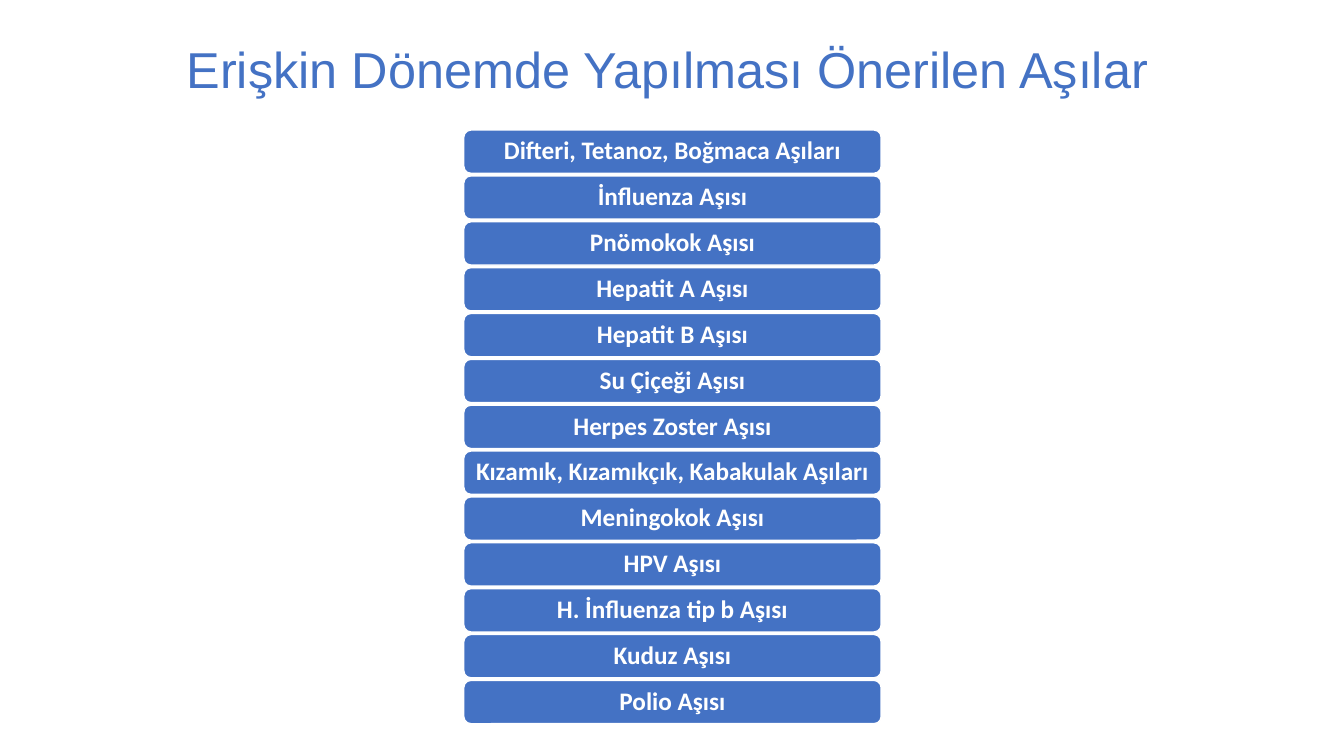
from pptx import Presentation
from pptx.dml.color import RGBColor
from pptx.enum import shapes, text
from pptx.util import Inches, Pt

TITLE = "Erişkin Dönemde Yapılması Önerilen Aşılar"
VACCINES = [
    "Difteri, Tetanoz, Boğmaca Aşıları",
    "İnfluenza Aşısı",
    "Pnömokok Aşısı",
    "Hepatit A Aşısı",
    "Hepatit B Aşısı",
    "Su Çiçeği Aşısı",
    "Herpes Zoster Aşısı",
    "Kızamık, Kızamıkçık, Kabakulak Aşıları",
    "Meningokok Aşısı",
    "HPV Aşısı",
    "H. İnfluenza tip b Aşısı",
    "Kuduz Aşısı",
    "Polio Aşısı",
]
COLORS = {"blue": "4472C4", "white": "FFFFFF"}

BAR_LEFT, BAR_WIDTH, BAR_HEIGHT = 4.6, 4.14, 0.43
FIRST_TOP, LAST_TOP = 1.29, 6.75


def color(name):
    return RGBColor.from_string(COLORS[name])


def write(frame, content, font_name, size, color_name, alignment, bold=False):
    frame.word_wrap = True
    frame.vertical_anchor = text.MSO_ANCHOR.MIDDLE
    paragraph = frame.paragraphs[0]
    paragraph.alignment = alignment
    paragraph.line_spacing = 0.9
    run = paragraph.add_run()
    run.text = content
    run.font.name = font_name
    run.font.size = Pt(size)
    run.font.bold = bold
    run.font.color.rgb = color(color_name)


def add_bar(slide, label, top):
    bar = slide.shapes.add_shape(
        shapes.MSO_SHAPE.ROUNDED_RECTANGLE,
        Inches(BAR_LEFT), Inches(top), Inches(BAR_WIDTH), Inches(BAR_HEIGHT))
    bar.shadow.inherit = False
    bar.fill.solid()
    bar.fill.fore_color.rgb = color("blue")
    bar.line.color.rgb = color("white")
    bar.line.width = Pt(1)
    frame = bar.text_frame
    frame.margin_left = frame.margin_right = Inches(0.09)
    frame.margin_top = frame.margin_bottom = Inches(0.06)
    write(frame, label, "Calibri", 18, "white", text.PP_ALIGN.CENTER, bold=True)


def main():
    presentation = Presentation()
    presentation.slide_width = Inches(13.33)
    presentation.slide_height = Inches(7.5)
    slide = presentation.slides.add_slide(presentation.slide_layouts[5])

    title = slide.shapes.title
    title.left, title.top = Inches(0.92), Inches(0)
    title.width, title.height = Inches(11.5), Inches(1.44)
    title.text_frame.margin_left = Inches(0.93)
    write(title.text_frame, TITLE, "Arial", 36, "blue", text.PP_ALIGN.LEFT)

    pitch = (LAST_TOP - FIRST_TOP) / (len(VACCINES) - 1)
    for index, vaccine in enumerate(VACCINES):
        add_bar(slide, vaccine, FIRST_TOP + index * pitch)

    presentation.save("out.pptx")


if __name__ == "__main__":
    main()
